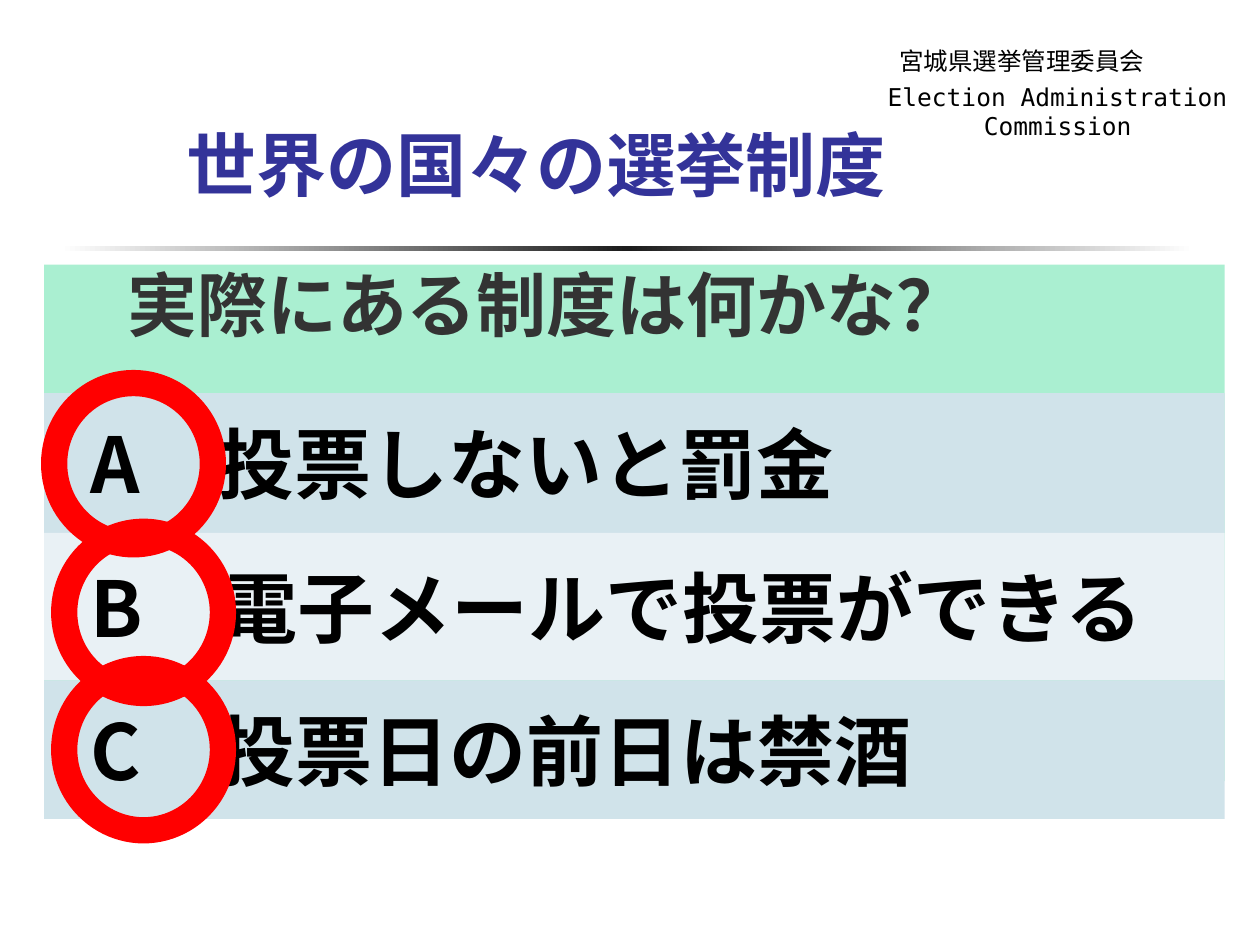
from copy import deepcopy

from lxml import etree
from pptx import Presentation
from pptx.dml.color import RGBColor
from pptx.enum.shapes import MSO_SHAPE
from pptx.enum.text import MSO_ANCHOR, MSO_AUTO_SIZE, PP_ALIGN
from pptx.oxml.ns import qn
from pptx.util import Inches, Pt

RECTANGLE, ROUNDED, OVAL = MSO_SHAPE.RECTANGLE, MSO_SHAPE.ROUNDED_RECTANGLE, MSO_SHAPE.OVAL
TOP, MIDDLE = MSO_ANCHOR.TOP, MSO_ANCHOR.MIDDLE
LEFT, CENTER = PP_ALIGN.LEFT, PP_ALIGN.CENTER
NO_AUTOFIT = MSO_AUTO_SIZE.NONE

JAPANESE, MONO = "Noto Sans CJK JP", "DejaVu Sans Mono"
COLORS = {
    "white": "FFFFFF", "black": "000000", "divider": "1C1C1C",
    "title": "333399", "question": "333333", "panel": "AAEFD1",
    "bar_dark": "D0E3EA", "bar_light": "E9F1F5", "ring": "FF0000",
}
PANEL_LEFT, PANEL_WIDTH = 0.35, 9.37
RING_SIZE = (1.26, 1.28)
# text, top and height of the bar, bar colour, left and top of the ring
ANSWERS = [
    ("A　投票しないと罰金", 3.12, 1.11, "bar_dark", 0.43, 3.04),
    ("B　電子メールで投票ができる", 4.23, 1.17, "bar_light", 0.51, 4.22),
    ("C　投票日の前日は禁酒", 5.4, 1.1, "bar_dark", 0.51, 5.31),
]


def color(name):
    return RGBColor.from_string(COLORS[name])


def place(shape, box):
    for side, value in zip(("left", "top", "width", "height"), box):
        setattr(shape, side, Inches(value))


def add_shape(page, kind, box, fill=None):
    shape = page.shapes.add_shape(kind, *map(Inches, box))
    shape.shadow.inherit = False
    shape.line.fill.background()
    if fill:
        shape.fill.solid()
        shape.fill.fore_color.rgb = color(fill)
    else:
        shape.fill.background()
    return shape


def write(shape, text, size, ink, font=JAPANESE, bold=True, align=LEFT,
          anchor=TOP, indent=0.1, spacing=1.0):
    frame = shape.text_frame
    frame_format = {
        "word_wrap": True, "auto_size": NO_AUTOFIT, "vertical_anchor": anchor,
        "margin_left": Inches(indent), "margin_right": Inches(0.1),
        "margin_top": Inches(0.05), "margin_bottom": Inches(0.05),
    }
    for name, value in frame_format.items():
        setattr(frame, name, value)
    para = frame.paragraphs[0]
    para.alignment, para.line_spacing, para.space_before = align, spacing, Pt(0)
    span = para.add_run()
    span.text = text
    for name, value in {"size": Pt(size), "bold": bold, "name": font}.items():
        setattr(span.font, name, value)
    span.font.color.rgb = color(ink)
    east_asian = etree.SubElement(span.font._element, qn("a:ea"))
    east_asian.set("typeface", font)
    return para


def add_divider(page, box):
    """Thin horizontal rule that fades to white at both ends."""
    divider = add_shape(page, RECTANGLE, box)
    divider.fill.gradient()
    divider.fill.gradient_angle = 0
    stop_list = divider.fill._fill._gradFill.find(qn("a:gsLst"))
    stop_list.insert(1, deepcopy(stop_list[0]))
    for stop, position, name in zip(divider.fill.gradient_stops, (0, 0.5, 1),
                                    ("white", "divider", "white")):
        stop.position = position
        stop.color.rgb = color(name)


def add_organization(page, box, text, font, spacing):
    label = page.shapes.add_textbox(*map(Inches, box))
    write(label, text, 14, "black", font, bold=False, align=CENTER, spacing=spacing)


def fill_title(page, box):
    place(page.shapes.title, box)
    write(page.shapes.title, "世界の国々の選挙制度", 40, "title", spacing=0.9)


def fill_question(page, box):
    panel = page.placeholders[1]
    place(panel, box)
    panel.fill.solid()
    panel.fill.fore_color.rgb = color("panel")
    para = write(panel, "実際にある制度は何かな？", 40, "question", indent=0.66, spacing=0.9)
    properties = para._p.get_or_add_pPr()
    properties.set("marL", "0")
    properties.set("indent", "0")
    etree.SubElement(properties, qn("a:buNone"))


def add_answer(page, box, text, fill):
    bar = add_shape(page, ROUNDED, box, fill)
    bar.adjustments[0] = 0
    write(bar, text, 44, "black", anchor=MIDDLE, indent=0.37)


def add_ring(page, box):
    ring = add_shape(page, OVAL, box)
    ring.line.color.rgb = color("ring")
    ring.line.width = Pt(15)


def main():
    deck = Presentation()
    deck.slide_width, deck.slide_height = Inches(10), Inches(7.5)
    page = deck.slides.add_slide(deck.slide_layouts[1])
    add_divider(page, (0.48, 1.95, 9, 0.04))
    add_organization(page, (6.97, 0.34, 2.28, 0.34), "宮城県選挙管理委員会", JAPANESE, 0.9)
    add_organization(page, (6.94, 0.6, 2.91, 0.34),
                     "Election Administration Commission", MONO, 1.0)
    fill_title(page, (1.38, 0.99, 7.64, 0.94))
    fill_question(page, (PANEL_LEFT, 2.1, PANEL_WIDTH, 4.1))
    for text, top, height, fill, _, _ in ANSWERS:
        add_answer(page, (PANEL_LEFT, top, PANEL_WIDTH, height), text, fill)
    for *_, left, top in ANSWERS:
        add_ring(page, (left, top, *RING_SIZE))
    deck.save("out.pptx")


if __name__ == "__main__":
    main()
